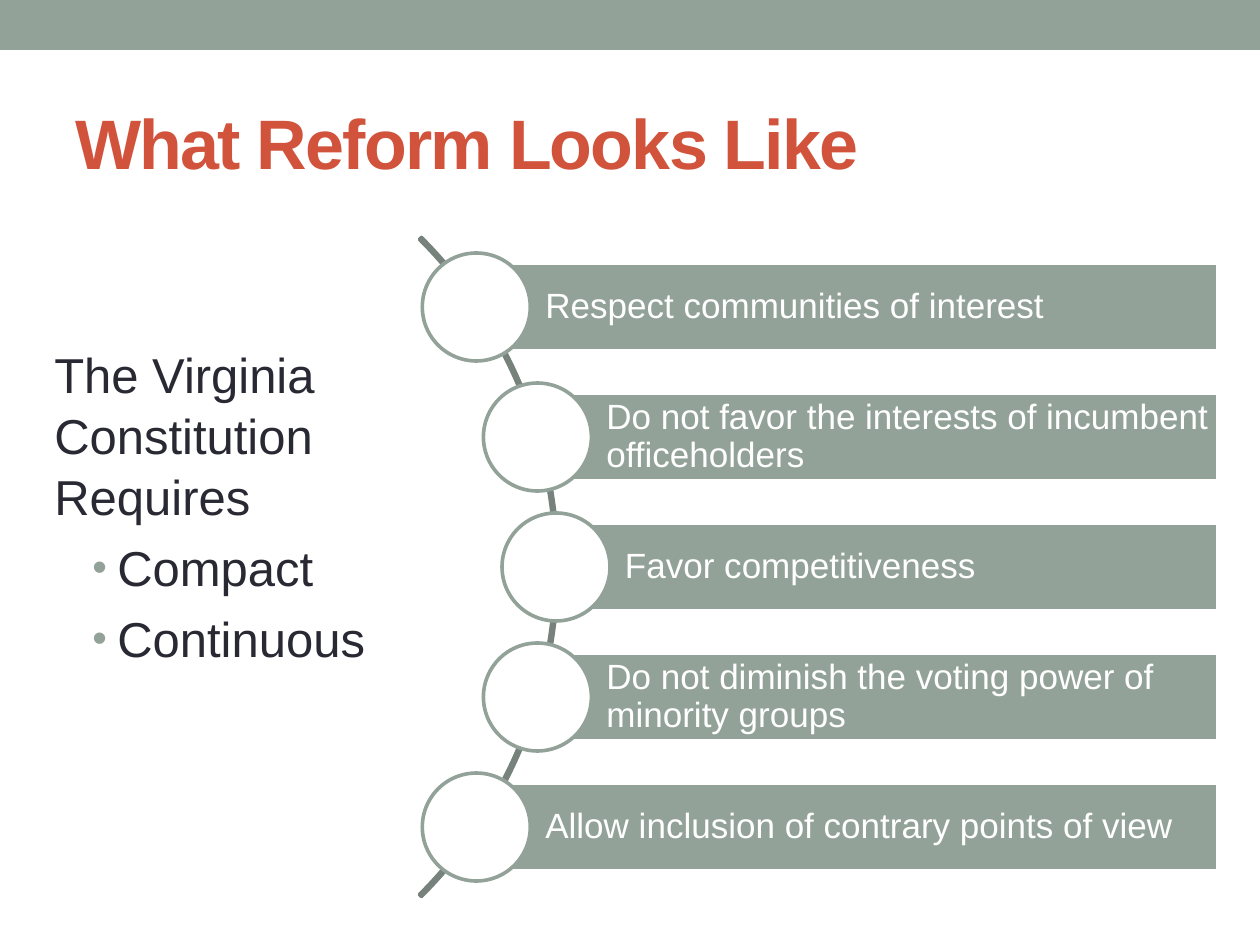
import math
from lxml import etree
from pptx import Presentation, util as u
from pptx.dml.color import RGBColor
from pptx.enum import shapes, text
from pptx.oxml.ns import qn

TITLE = "What Reform Looks Like"
NEEDS = ["The Virginia Constitution Requires", "Compact", "Continuous"]
GOALS = [
    "Respect communities of interest",
    "Do not favor the interests of incumbent officeholders",
    "Favor competitiveness",
    "Do not diminish the voting power of minority groups",
    "Allow inclusion of contrary points of view",
]
SAGE, SLATE, WHITE, INK, RUST = "93A299", "76827B", "FFFFFF", "292934", "D2533C"
LINE = 2.08
HUB_X, HUB_Y, ORBIT, ARC = 92, 567, 464, 466
STEP, BAR_H, DOT, RIGHT = 130, 87, 108, 1218
KIND = shapes.MSO_SHAPE


def px(n):
    return u.Emu(round(n * 914400 / 126))


def color(code):
    return RGBColor.from_string(code)


def draw(kind, box, fill, line=None):
    shape = slide.shapes.add_shape(kind, *map(px, box))
    shape.shadow.inherit = False
    if fill:
        shape.fill.solid()
        shape.fill.fore_color.rgb = color(fill)
    else:
        shape.fill.background()
    if line:
        shape.line.color.rgb = color(line)
        shape.line.width = u.Pt(LINE)
    else:
        shape.line.fill.background()
    return shape


def style(para, size, code, bold=False):
    para.alignment = text.PP_ALIGN.LEFT
    for run in para.runs:
        font = run.font
        font.name, font.size, font.bold = "Arial", u.Pt(size), bold
        font.color.rgb = color(code)


def label(box):
    frame = slide.shapes.add_textbox(*map(px, box)).text_frame
    frame.word_wrap = True
    return frame


def bullet(para):
    props = para._p.get_or_add_pPr()
    props.set("marL", str(px(63)))
    props.set("indent", str(px(-25)))
    tint = etree.SubElement(props, qn("a:buClr"))
    etree.SubElement(tint, qn("a:srgbClr"), val=SAGE)
    etree.SubElement(props, qn("a:buSzPct"), val="85000")
    etree.SubElement(props, qn("a:buFont"), typeface="Arial")
    etree.SubElement(props, qn("a:buChar"), char="•")


deck = Presentation()
deck.slide_width, deck.slide_height = px(1260), px(945)
slide = deck.slides.add_slide(deck.slide_layouts[6])

draw(KIND.RECTANGLE, (0, 0, 1260, 50), SAGE)

head = label((63, 73, 1134, 136))
head.vertical_anchor = text.MSO_ANCHOR.MIDDLE
head.text = TITLE
style(head.paragraphs[0], 40, RUST, True)
head.paragraphs[0].runs[0].font._element.set("spc", "-100")

body = label((42, 336, 431, 462))
body.text = "\n".join(NEEDS)
for i, para in enumerate(body.paragraphs):
    style(para, 28, INK)
    para.line_spacing = 1.04
    para.space_before = u.Pt(5.6)
    if i:
        bullet(para)

arc = draw(KIND.BLOCK_ARC, (HUB_X - ARC, HUB_Y - ARC, 2 * ARC, 2 * ARC), None, SLATE)
for i, value in enumerate((189, 27, 0.003)):
    arc.adjustments[i] = value

for i, goal in enumerate(GOALS):
    rise = (i - len(GOALS) // 2) * STEP
    x, y = HUB_X + math.sqrt(ORBIT ** 2 - rise ** 2), HUB_Y + rise
    bar = draw(KIND.RECTANGLE, (x, y - BAR_H / 2, RIGHT - x, BAR_H), SAGE, WHITE)
    frame = bar.text_frame
    frame.word_wrap = True
    frame.vertical_anchor = text.MSO_ANCHOR.MIDDLE
    frame.margin_left = px(69)
    frame.margin_top = frame.margin_right = frame.margin_bottom = px(7)
    frame.text = goal
    style(frame.paragraphs[0], 20, WHITE)
    frame.paragraphs[0].line_spacing = 0.9
    draw(KIND.OVAL, (x - DOT / 2, y - DOT / 2, DOT, DOT), WHITE, SAGE)

deck.save("out.pptx")
